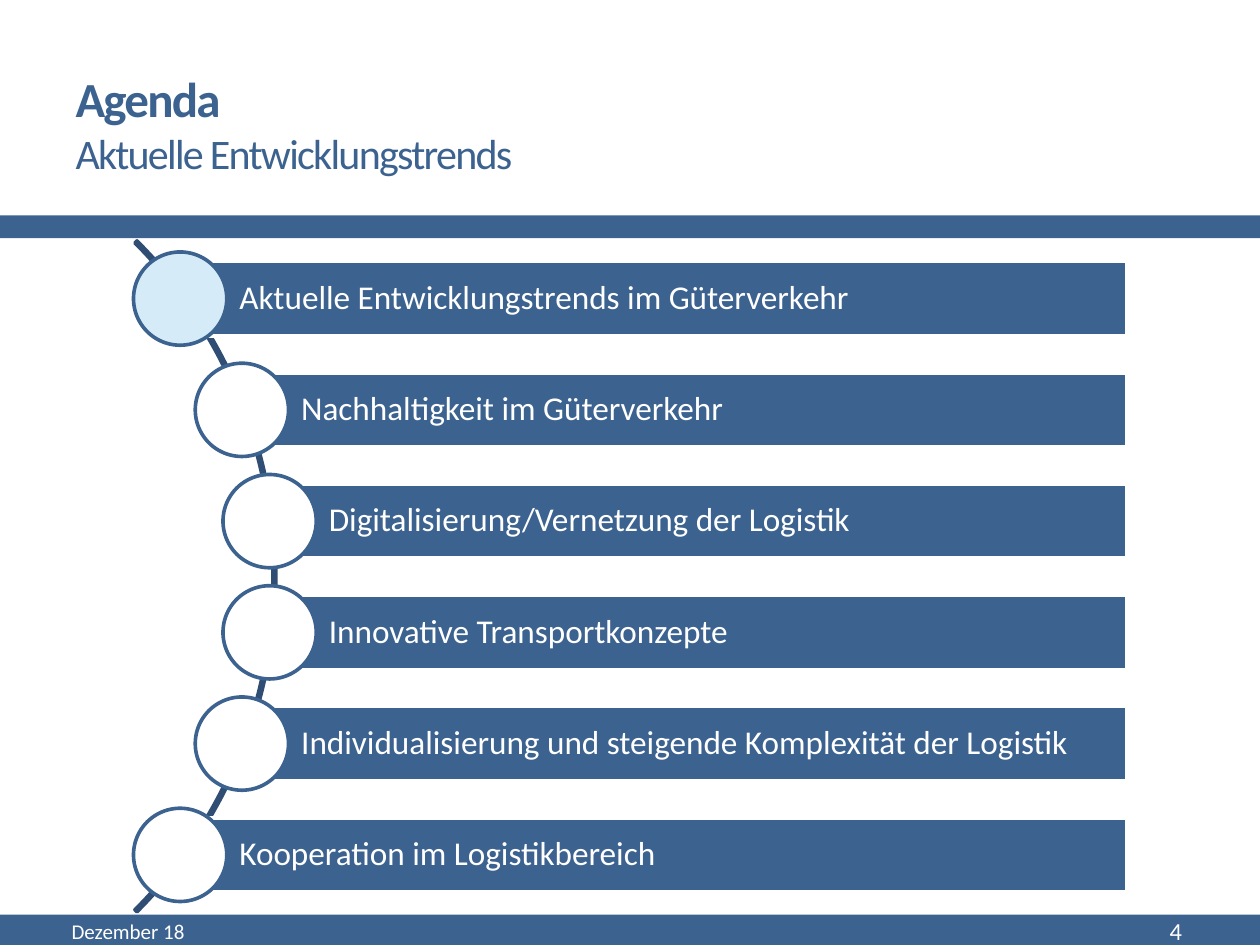
import pptx
import pptx.dml.color
import pptx.enum.shapes
import pptx.enum.text
import pptx.util

Inches = pptx.util.Inches
Pt = pptx.util.Pt
SHAPE = pptx.enum.shapes.MSO_SHAPE
ALIGN = pptx.enum.text.PP_ALIGN

BLUE, DARK_BLUE, LIGHT_BLUE, WHITE = "3C628F", "304E73", "D5EBF7", "FFFFFF"


def add_filled_shape(kind, left, top, width, height, fill, line=None):
    """Add a preset shape without shadow; no line colour means no outline."""
    shape = slide.shapes.add_shape(
        kind, Inches(left), Inches(top), Inches(width), Inches(height))
    shape.shadow.inherit = False
    shape.fill.solid()
    shape.fill.fore_color.rgb = pptx.dml.color.RGBColor.from_string(fill)
    if line:
        shape.line.color.rgb = pptx.dml.color.RGBColor.from_string(line)
        shape.line.width = Pt(2.08)
    else:
        shape.line.fill.background()
    return shape


def write_text(shape, text, size, color, bold=False, align=ALIGN.LEFT,
               spacing=None, line_spacing=None, inset=0.1):
    """Append a run to the first paragraph of a shape and format it."""
    frame = shape.text_frame
    frame.word_wrap = True
    frame.auto_size = pptx.enum.text.MSO_AUTO_SIZE.NONE
    frame.vertical_anchor = pptx.enum.text.MSO_ANCHOR.MIDDLE
    frame.margin_left = Inches(inset)
    paragraph = frame.paragraphs[0]
    paragraph.alignment = align
    paragraph.line_spacing = line_spacing
    if paragraph.runs:
        paragraph.add_line_break()
    run = paragraph.add_run()
    run.text = text
    run.font.name = "Calibri"
    run.font.size = Pt(size)
    run.font.bold = bold
    run.font.color.rgb = pptx.dml.color.RGBColor.from_string(color)
    if spacing is not None:
        run._r.get_or_add_rPr().set("spc", str(spacing * 100))


presentation = pptx.Presentation()
presentation.slide_width = Inches(10)
presentation.slide_height = Inches(7.5)
slide = presentation.slides.add_slide(presentation.slide_layouts[5])

# Header and footer bands
add_filled_shape(SHAPE.RECTANGLE, -0.04, 7.26, 10.16, 0.5, BLUE)
add_filled_shape(SHAPE.RECTANGLE, -0.02, 1.71, 10.12, 0.18, BLUE)

# Title with subtitle line
title = slide.shapes.title
title.left, title.top = Inches(0.5), Inches(0.44)
title.width, title.height = Inches(5.21), Inches(1.08)
write_text(title, "Agenda", size=28, color=BLUE, bold=True, spacing=-1)
write_text(title, "Aktuelle Entwicklungstrends", size=24, color=BLUE, spacing=-1)

# Footer texts
for text, left, width, size, align in [
    ("Dezember 18", 0.47, 3.17, 12, ALIGN.LEFT),
    ("4", 8.31, 1.17, 14, ALIGN.RIGHT),
]:
    footer = slide.shapes.add_textbox(
        Inches(left), Inches(7.21), Inches(width), Inches(0.36))
    write_text(footer, text, size=size, color=WHITE, align=align)

# Arc that links the agenda items
arc = add_filled_shape(SHAPE.BLOCK_ARC, -5.34, 0.81, 7.53, 7.53, DARK_BLUE, DARK_BLUE)
arc.adjustments[0] = 189
arc.adjustments[1] = 27
arc.adjustments[2] = 0.003

# Agenda items: each bar starts at the centre of its circle
first_center, pitch = 2.37, 0.883
bar_right, bar_height, diameter = 8.94, 0.59, 0.74
agenda = [
    ("Aktuelle Entwicklungstrends im Güterverkehr", 1.43),
    ("Nachhaltigkeit im Güterverkehr", 1.92),
    ("Digitalisierung/Vernetzung der Logistik", 2.14),
    ("Innovative Transportkonzepte", 2.14),
    ("Individualisierung und steigende Komplexität der Logistik", 1.92),
    ("Kooperation im Logistikbereich", 1.43),
]
for index, (topic, left) in enumerate(agenda):
    center = first_center + index * pitch
    bar = add_filled_shape(SHAPE.RECTANGLE, left, center - bar_height / 2,
                           bar_right - left, bar_height, BLUE, WHITE)
    write_text(bar, topic, size=19, color=WHITE, line_spacing=0.9, inset=0.47)
    bar.text_frame.margin_right = Inches(0.05)
    add_filled_shape(SHAPE.OVAL, left - diameter / 2, center - diameter / 2,
                     diameter, diameter, WHITE if index else LIGHT_BLUE, BLUE)

presentation.save("out.pptx")
